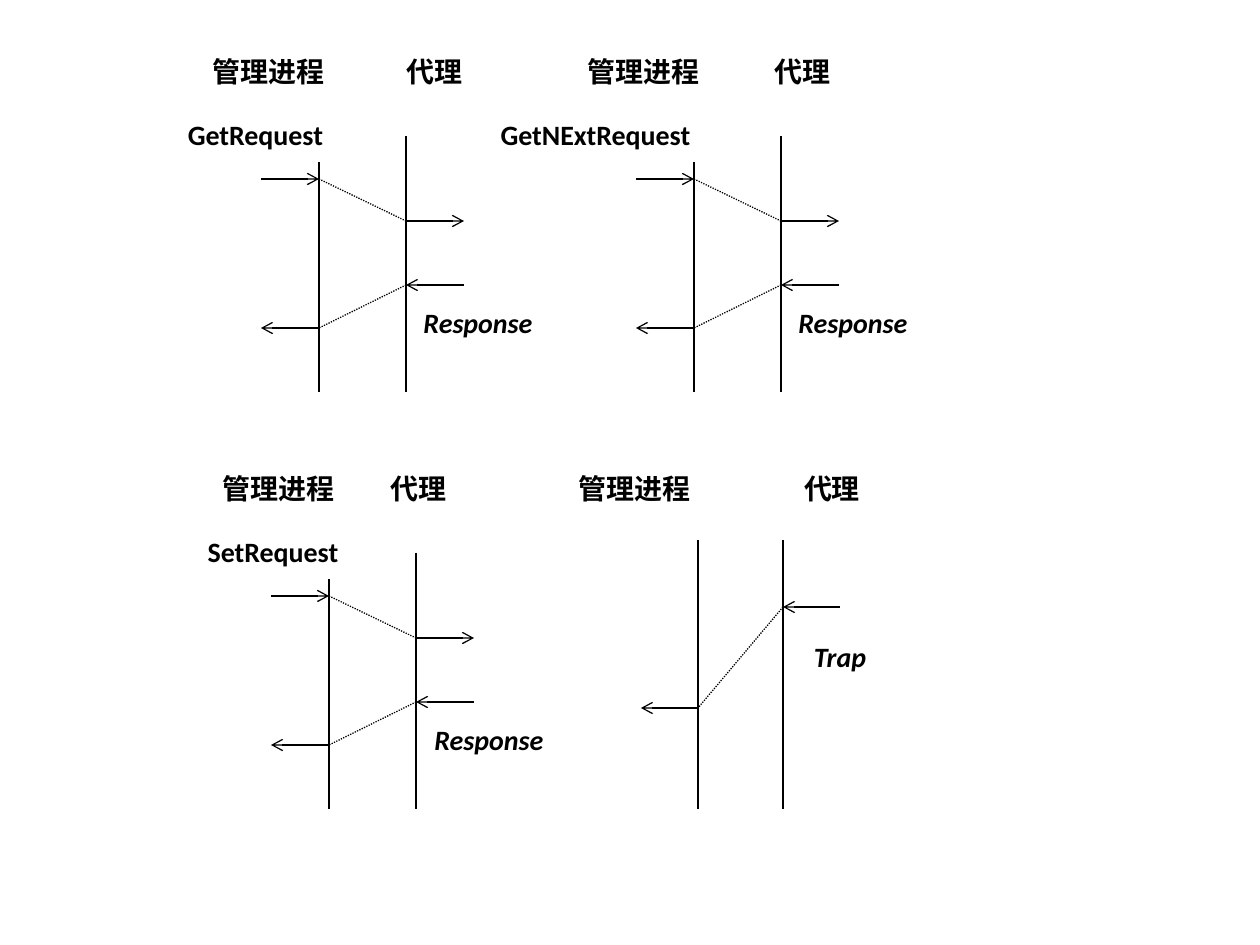
from lxml import etree
from pptx import Presentation
from pptx.dml.color import RGBColor
from pptx.enum.dml import MSO_LINE
from pptx.enum.shapes import MSO_CONNECTOR, MSO_SHAPE
from pptx.enum.text import MSO_ANCHOR, PP_ALIGN
from pptx.oxml.ns import qn
from pptx.util import Pt

STRAIGHT, RECTANGLE = MSO_CONNECTOR.STRAIGHT, MSO_SHAPE.RECTANGLE
DOTTED = MSO_LINE.ROUND_DOT
CENTER, TOP = PP_ALIGN.CENTER, MSO_ANCHOR.TOP
PX = 914400 / 126
BLACK, WHITE = "000000", "FFFFFF"
MANAGER, AGENT = "管理进程", "代理"

# Message legs: (sender, height at sender, height at receiver), below lifeline top
REQUEST_RESPONSE = [(MANAGER, 43, 85), (AGENT, 149, 192)]
TRAP_ONLY = [(AGENT, 68, 169)]

# Labels: (text, left, top, width, height, italic)
EXCHANGES = [
    {"origin": (319, 136), "gap": 87, "length": 256, "arrow": 58,
     "legs": REQUEST_RESPONSE,
     "labels": [(MANAGER, 189, 55, 159, 43, False),
                (AGENT, 384, 55, 101, 43, False),
                ("GetRequest", 164, 118, 183, 43, False),
                ("Response", 420, 306, 116, 43, True)]},
    {"origin": (694, 136), "gap": 87, "length": 256, "arrow": 58,
     "legs": REQUEST_RESPONSE,
     "labels": [(MANAGER, 564, 55, 159, 43, False),
                (AGENT, 752, 55, 101, 43, False),
                ("GetNExtRequest", 479, 118, 233, 43, False),
                ("Response", 795, 306, 116, 43, True)]},
    {"origin": (329, 553), "gap": 87, "length": 256, "arrow": 58,
     "legs": REQUEST_RESPONSE,
     "labels": [(MANAGER, 199, 472, 159, 43, False),
                (AGENT, 368, 472, 101, 43, False),
                ("SetRequest", 200, 535, 146, 43, False),
                ("Response", 431, 723, 116, 43, True)]},
    {"origin": (698, 539), "gap": 85, "length": 270, "arrow": 57,
     "legs": TRAP_ONLY,
     "labels": [(MANAGER, 557, 472, 155, 67, False),
                (AGENT, 782, 472, 100, 67, False),
                ("Trap", 798, 640, 84, 67, True)]},
]


def px(*values):
    return [round(value * PX) for value in values]


def color(value):
    return RGBColor.from_string(value)


def draw_line(slide, start, end, arrow=False, dotted=False):
    line = slide.shapes.add_connector(STRAIGHT, *px(*start, *end))
    line.line.color.rgb = color(BLACK)
    line.line.width = Pt(0.75)
    if dotted:
        line.line.dash_style = DOTTED
    properties = line._element.spPr
    if arrow:
        outline = properties.find(qn("a:ln"))
        etree.SubElement(outline, qn("a:tailEnd"), type="arrow")
    etree.SubElement(properties, qn("a:effectLst"))


def draw_label(slide, text, left, top, width, height, italic):
    label = slide.shapes.add_shape(RECTANGLE, *px(left, top, width, height))
    label.shadow.inherit = False
    label.fill.solid()
    label.fill.fore_color.rgb = color(WHITE)
    label.line.color.rgb = color(WHITE)
    label.line.width = Pt(0.75)
    frame = label.text_frame
    frame_format = {"margin_left": 0, "margin_top": 0, "margin_right": 0,
                    "margin_bottom": 0, "word_wrap": True,
                    "vertical_anchor": TOP}
    for key, value in frame_format.items():
        setattr(frame, key, value)
    paragraph = frame.paragraphs[0]
    paragraph.alignment = CENTER
    run = paragraph.add_run()
    run.text = text
    run_format = {"name": "Calibri", "size": Pt(16), "bold": True, "italic": italic}
    for key, value in run_format.items():
        setattr(run.font, key, value)
    run.font.color.rgb = color(BLACK)


def draw_exchange(slide, exchange):
    manager_x, top = exchange["origin"]
    agent_x = manager_x + exchange["gap"]
    outer_left = manager_x - exchange["arrow"]
    outer_right = agent_x + exchange["arrow"]

    # Lifelines
    for x in (manager_x, agent_x):
        draw_line(slide, (x, top), (x, top + exchange["length"]))

    # Labels hide the lifeline behind them
    for label in exchange["labels"]:
        draw_label(slide, *label)

    # Each message goes in by an arrow, across on dots and out by an arrow
    for sender, sent, received in exchange["legs"]:
        stops = [outer_left, manager_x, agent_x, outer_right]
        if sender == AGENT:
            stops.reverse()
        heights = [top + sent] * 2 + [top + received] * 2
        enter, leave, arrive, out = zip(stops, heights)
        draw_line(slide, enter, leave, arrow=True)
        draw_line(slide, leave, arrive, dotted=True)
        draw_line(slide, arrive, out, arrow=True)


def main():
    deck = Presentation()
    deck.slide_width, deck.slide_height = px(1260, 945)
    slide = deck.slides.add_slide(deck.slide_layouts[6])
    for exchange in EXCHANGES:
        draw_exchange(slide, exchange)
    deck.save("out.pptx")


if __name__ == "__main__":
    main()
